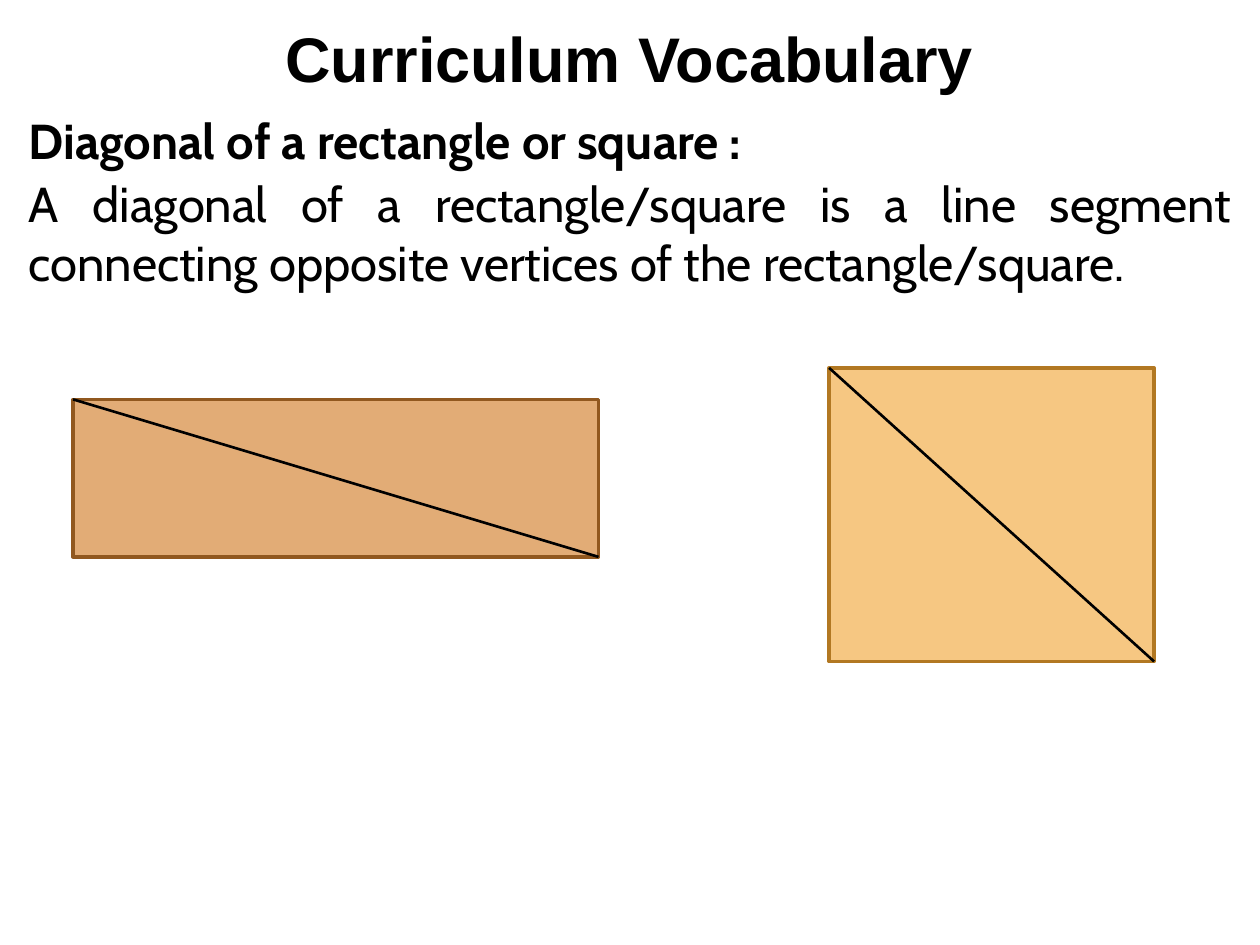
import pptx
import pptx.util
import pptx.dml.color
import pptx.enum.shapes
import pptx.enum.text
import pptx.oxml.ns
from lxml import etree

Inches = pptx.util.Inches
Align = pptx.enum.text.PP_ALIGN
Anchor = pptx.enum.text.MSO_ANCHOR

COLORS = {
    "text": "000000",
    "diagonal": "000000",
    "rectangle": "E2AC76",
    "rectangle edge": "91581F",
    "square": "F6C782",
    "square edge": "B27822",
}


def color(name):
    return pptx.dml.color.RGBColor.from_string(COLORS[name])


def add_text(page, text, left, top, width, height, *, size=28, font="Cabin",
             bold=False, align=Align.LEFT, anchor=Anchor.TOP):
    box = page.shapes.add_textbox(Inches(left), Inches(top), Inches(width), Inches(height))
    frame = box.text_frame
    frame.word_wrap = True
    frame.vertical_anchor = anchor
    para = frame.paragraphs[0]
    para.alignment = align
    span = para.add_run()
    span.text = text
    span.font.size = pptx.util.Pt(size)
    span.font.name = font
    span.font.bold = bold
    span.font.color.rgb = color("text")


def add_figure(page, name, left, top, width, height):
    """Draw a filled four-sided figure."""
    figure = page.shapes.add_shape(
        pptx.enum.shapes.MSO_SHAPE.RECTANGLE,
        Inches(left), Inches(top), Inches(width), Inches(height))
    figure.shadow.inherit = False
    figure.fill.solid()
    figure.fill.fore_color.rgb = color(name)
    figure.line.color.rgb = color(name + " edge")
    figure.line.width = pptx.util.Pt(2)
    return figure


def add_diagonal(page, figure):
    """Join the top left and bottom right corners of a figure."""
    line = page.shapes.add_connector(
        pptx.enum.shapes.MSO_CONNECTOR.STRAIGHT, figure.left, figure.top,
        figure.left + figure.width, figure.top + figure.height)
    line.line.color.rgb = color("diagonal")
    line.line.width = pptx.util.Pt(1.5)
    etree.SubElement(line._element.spPr, pptx.oxml.ns.qn("a:effectLst"))


def main():
    deck = pptx.Presentation()
    deck.slide_width = Inches(10)
    deck.slide_height = Inches(7.5)
    page = deck.slides.add_slide(deck.slide_layouts[6])

    # Title
    add_text(page, "Curriculum Vocabulary", 0.25, 0.08, 9.49, 0.75, size=36,
             font="Arial", bold=True, align=Align.CENTER, anchor=Anchor.MIDDLE)

    # Term and definition
    add_text(page, "Diagonal of a rectangle or square :", 0.13, 0.83, 9.74, 0.57, bold=True)
    add_text(page, "A diagonal of a rectangle/square is a line segment connecting "
             "opposite vertices of the rectangle/square.",
             0.13, 1.33, 9.74, 1.04, align=Align.JUSTIFY)

    # Figures with their diagonals
    square = add_figure(page, "square", 6.58, 2.92, 2.58, 2.33)
    rectangle = add_figure(page, "rectangle", 0.58, 3.17, 4.17, 1.25)
    for figure in (rectangle, square):
        add_diagonal(page, figure)

    deck.save("out.pptx")


if __name__ == "__main__":
    main()
